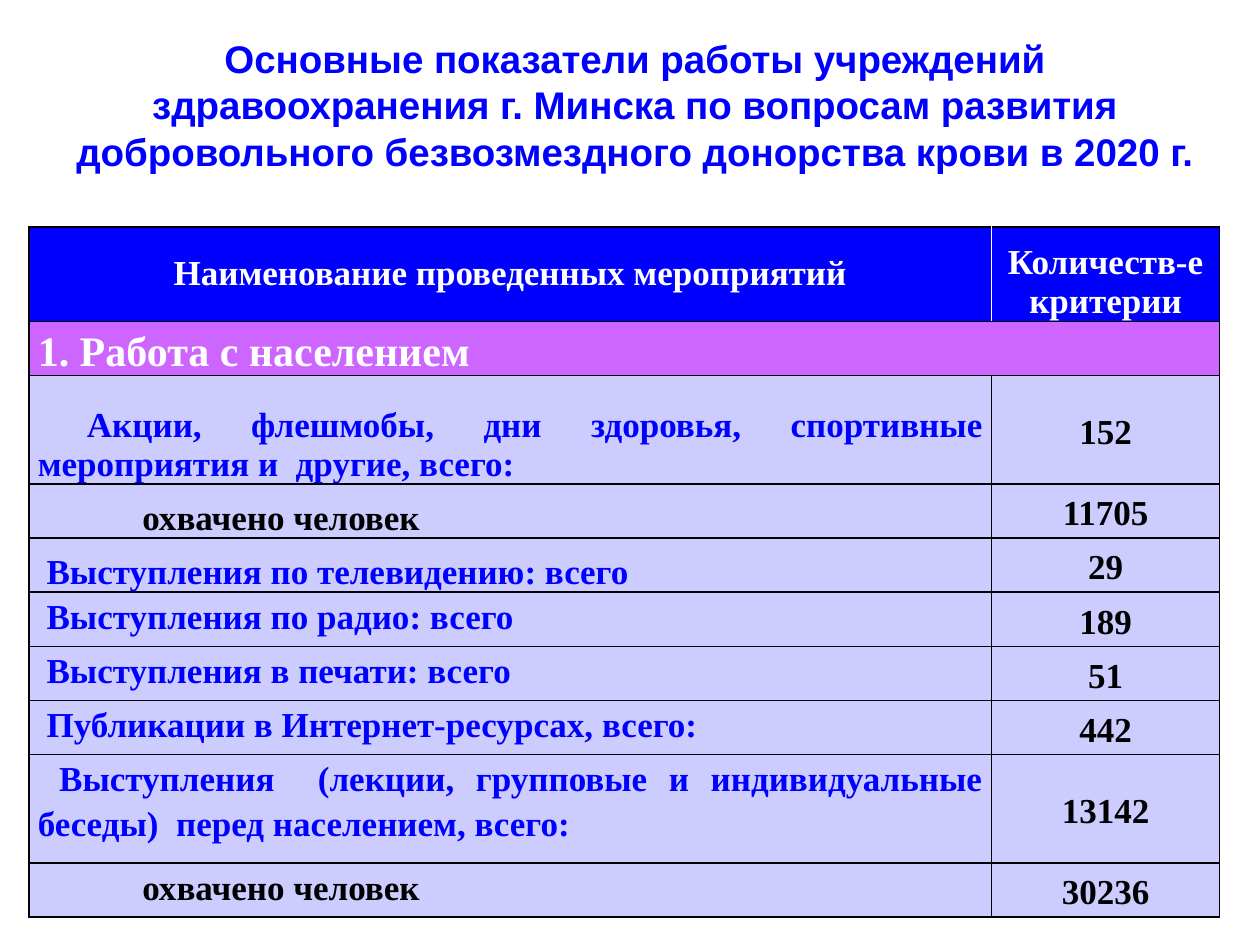
from dataclasses import dataclass

from lxml import etree
from pptx import Presentation
from pptx import util as u
from pptx.dml import color
from pptx.enum import text
from pptx.oxml import ns


@dataclass(frozen=True)
class Theme:
    blue: str = "0000FF"
    violet: str = "CC66FF"
    lavender: str = "CCCCFF"
    white: str = "FFFFFF"
    black: str = "000000"
    title_font: str = "Arial"
    table_font: str = "Times New Roman"
    title_size: int = 22
    section_size: int = 24
    table_size: int = 20


THEME = Theme()
TOP, MIDDLE, BOTTOM = (text.MSO_ANCHOR.TOP, text.MSO_ANCHOR.MIDDLE,
                       text.MSO_ANCHOR.BOTTOM)
CENTER, JUSTIFY = text.PP_ALIGN.CENTER, text.PP_ALIGN.JUSTIFY

TITLE = ("Основные показатели работы учреждений здравоохранения г. Минска "
         "по вопросам развития добровольного безвозмездного донорства крови "
         "в 2020 г.")
HEADERS = ["Наименование проведенных мероприятий", "Количеств-е критерии"]
SECTION = "1. Работа с населением"

# Activity, value, first-line indent, anchor, line spacing, colour
ACTIVITIES = [
    ("Акции, флешмобы, дни здоровья, спортивные мероприятия и  другие, всего:",
     "152", 0.39, BOTTOM, 1.0, THEME.blue),
    ("охвачено человек", "11705", 0.83, BOTTOM, 1.15, THEME.black),
    ("Выступления по телевидению: всего", "29", 0.07, BOTTOM, 1.15, THEME.blue),
    ("Выступления по радио: всего", "189", 0.07, TOP, 1.15, THEME.blue),
    ("Выступления в печати: всего", "51", 0.07, TOP, 1.15, THEME.blue),
    ("Публикации в Интернет-ресурсах, всего:", "442", 0.07, TOP, 1.15,
     THEME.blue),
    ("Выступления  (лекции, групповые и индивидуальные беседы)  перед "
     "населением, всего:", "13142", 0.17, TOP, 1.15, THEME.blue),
    ("охвачено человек", "30236", 0.83, TOP, 1.15, THEME.black),
]
COLUMN_WIDTHS = [7.64, 1.81]
LINE_HEIGHT = 0.43
ROW_HEIGHTS = [0.75] + [LINE_HEIGHT * lines
                        for lines in (1, 2, 1, 1, 1, 1, 1, 2, 1)]


def add_span(para, words, font, size, rgb):
    span = para.add_run()
    span.text = words
    span.font.name = font
    span.font.size = u.Pt(size)
    span.font.bold = True
    span.font.color.rgb = color.RGBColor.from_string(rgb)


def set_borders(cell, white_side=None):
    """Draw a 1 pt line on every side, black except for white_side."""
    properties = cell._tc.get_or_add_tcPr()
    for side in "LRTB":
        line = etree.SubElement(properties, ns.qn(f"a:ln{side}"),
                                w=str(u.Pt(1)))
        fill = etree.SubElement(line, ns.qn("a:solidFill"))
        rgb = THEME.white if side == white_side else THEME.black
        etree.SubElement(fill, ns.qn("a:srgbClr"), val=rgb)


def fill_cell(cell, words, fill, rgb, anchor=MIDDLE, align=CENTER,
              spacing=1.15, indent=0, size=THEME.table_size, white_side=None):
    set_borders(cell, white_side)
    cell.fill.solid()
    cell.fill.fore_color.rgb = color.RGBColor.from_string(fill)
    cell.margin_left = cell.margin_right = u.Inches(0.07)
    cell.margin_top = cell.margin_bottom = 0
    cell.vertical_anchor = anchor
    para = cell.text_frame.paragraphs[0]
    para.alignment = align
    para.line_spacing = spacing
    if indent:
        para._p.get_or_add_pPr().set("indent", str(u.Inches(indent)))
    if words:
        add_span(para, words, THEME.table_font, size, rgb)


def add_title(page, left, top, width, height):
    box = page.shapes.title
    box.left, box.top = u.Inches(left), u.Inches(top)
    box.width, box.height = u.Inches(width), u.Inches(height)
    frame = box.text_frame
    frame.word_wrap = True
    frame.auto_size = text.MSO_AUTO_SIZE.NONE
    frame.vertical_anchor = TOP
    para = frame.paragraphs[0]
    para.alignment = CENTER
    add_span(para, TITLE, THEME.title_font, THEME.title_size, THEME.blue)


def add_indicators(page, left, top, width, height):
    table = page.shapes.add_table(
        len(ROW_HEIGHTS), len(COLUMN_WIDTHS), u.Inches(left), u.Inches(top),
        u.Inches(width), u.Inches(height)).table
    table.first_row = table.horz_banding = False
    for column, size in zip(table.columns, COLUMN_WIDTHS):
        column.width = u.Inches(size)
    for row, size in zip(table.rows, ROW_HEIGHTS):
        row.height = u.Inches(size)

    # Header row, with a white divider
    for index, (anchor, side) in enumerate([(MIDDLE, "R"), (BOTTOM, "L")]):
        fill_cell(table.cell(0, index), HEADERS[index], THEME.blue,
                  THEME.white, anchor, spacing=1.0, white_side=side)

    # Section row across both columns
    table.cell(1, 0).merge(table.cell(1, 1))
    for index, words in enumerate([SECTION, ""]):
        fill_cell(table.cell(1, index), words, THEME.violet, THEME.white,
                  BOTTOM, JUSTIFY, size=THEME.section_size)

    # Activities and their values
    for row, (name, value, indent, anchor, spacing, rgb) in enumerate(
            ACTIVITIES, start=2):
        fill_cell(table.cell(row, 0), name, THEME.lavender, rgb, anchor,
                  JUSTIFY, spacing, indent)
        fill_cell(table.cell(row, 1), value, THEME.lavender, THEME.black)


def main():
    deck = Presentation()
    deck.slide_width, deck.slide_height = u.Inches(10), u.Inches(7.5)
    page = deck.slides.add_slide(deck.slide_layouts.get_by_name("Title Only"))
    add_indicators(page, 0.23, 1.8, sum(COLUMN_WIDTHS), sum(ROW_HEIGHTS))
    add_title(page, 0.39, 0.23, 9.3, 1.21)
    deck.save("out.pptx")


if __name__ == "__main__":
    main()
